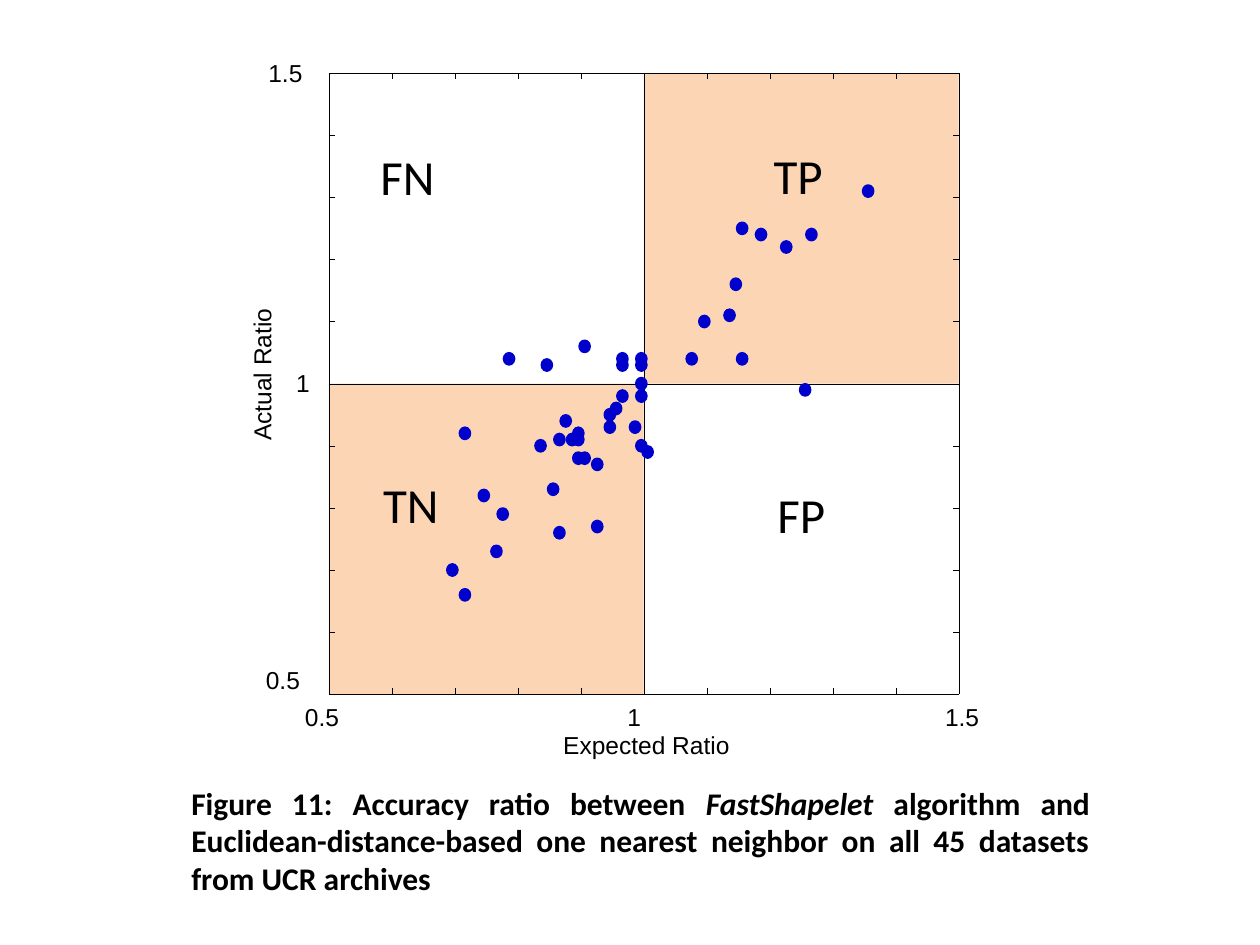
from typing import NamedTuple

from lxml import etree
from pptx import Presentation, util as u
from pptx.dml.color import RGBColor
from pptx.enum import shapes as es, text as et
from pptx.oxml.ns import qn

HUES = {"ink": "000000", "shade": "FCD5B5", "dot": "0000CC"}

# The plot is a grid of ten columns and ten rows; all places are in grid units.
LEFT, TOP = 2.61, 0.58
COL, ROW = 0.5, 0.493
SIDE = 10
MID = SIDE / 2
TICK = 0.1
LOW, HIGH = 0.5, 1.5
SHIFT = -0.04  # dots sit slightly left of their exact value
HAIR, THIN = 0.1, 0.25


class Box(NamedTuple):
    col: float
    row: float
    wide: float
    high: float


class Label(NamedTuple):
    words: str
    box: Box
    turn: int = 0


class Dot(NamedTuple):
    x: float
    y: float


AXES = [
    Label("0.5", Box(-0.38, 10.12, 0.58, 0.49)),
    Label("1", Box(4.74, 10.12, 0.24, 0.49)),
    Label("1.5", Box(9.78, 10.12, 0.58, 0.49)),
    Label("0.5", Box(-1, 9.53, 0.58, 0.49)),
    Label("1", Box(-0.52, 4.75, 0.24, 0.49)),
    Label("1.5", Box(-0.96, -0.24, 0.58, 0.49)),
    Label("Expected Ratio", Box(3.72, 10.57, 2.68, 0.49)),
    Label("Actual Ratio", Box(-2.12, 4.6, 2.12, 0.49), 270),
]
ZONES = [
    Label("FP", Box(7.12, 6.63, 0.78, 0.95)),
    Label("TP", Box(7.06, 1.16, 0.8, 0.95)),
    Label("FN", Box(0.82, 1.18, 0.88, 0.95)),
    Label("TN", Box(0.86, 6.47, 0.92, 0.95)),
]
CAPTION = [
    ("Figure 11: Accuracy ratio between ", False),
    ("FastShapelet", True),
    (" algorithm and Euclidean-distance-based one nearest neighbor "
     "on all 45 datasets from UCR archives ", False),
]
DOTS = [Dot(*pair) for pair in (
    (0.70, 0.70), (0.78, 0.79), (1.08, 1.04), (1.14, 1.11), (1.00, 0.90),
    (0.72, 0.92), (1.27, 1.24), (1.00, 1.03), (0.88, 0.94), (0.90, 0.88),
    (1.16, 1.25), (1.15, 1.16), (0.93, 0.87), (0.85, 1.03), (0.97, 1.03),
    (0.79, 1.04), (0.87, 0.76), (0.95, 0.95), (0.95, 0.93), (0.97, 1.04),
    (0.91, 1.06), (0.86, 0.83), (1.01, 0.89), (0.90, 0.91), (1.19, 1.24),
    (1.26, 0.99), (0.89, 0.91), (1.10, 1.10), (0.99, 0.93), (1.16, 1.04),
    (1.00, 1.04), (1.36, 1.31), (1.00, 0.98), (1.23, 1.22), (1.00, 1.00),
    (0.72, 0.66), (0.91, 0.88), (0.75, 0.82), (0.93, 0.77), (0.77, 0.73),
    (0.96, 0.96), (0.90, 0.92), (0.97, 0.98), (0.87, 0.91), (0.84, 0.90),
)]


def hue(name: str) -> RGBColor:
    return RGBColor.from_string(HUES[name])


def spot(col: float, row: float) -> tuple[int, int]:
    """Turn a grid place into slide lengths."""
    return u.Inches(LEFT + col * COL), u.Inches(TOP + row * ROW)


def frame(box: Box) -> tuple[int, int, int, int]:
    """Turn a grid box into left, top, width and height."""
    return (*spot(box.col, box.row),
            u.Inches(box.wide * COL), u.Inches(box.high * ROW))


def add_form(slide, kind, box: Box, fill: str, edge: float = 0) -> None:
    form = slide.shapes.add_shape(kind, *frame(box))
    form.shadow.inherit = False
    form.fill.solid()
    form.fill.fore_color.rgb = hue(fill)
    if edge:
        form.line.color.rgb = hue(fill)
        form.line.width = u.Pt(edge)
    else:
        form.line.fill.background()


def add_line(slide, start: tuple, end: tuple, width: float = HAIR) -> None:
    line = slide.shapes.add_connector(
        es.MSO_CONNECTOR.STRAIGHT, *spot(*start), *spot(*end))
    line.line.color.rgb = hue("ink")
    line.line.width = u.Pt(width)
    props = line._element.find(qn("p:spPr"))
    etree.SubElement(props, qn("a:effectLst"))


def add_text(slide, runs: list, box: Box, *, font: str, size: int,
             turn: int = 0, bold: bool = False, wrap: bool = False,
             align=None, inset: bool = False) -> None:
    """Add one paragraph made of (words, italic) runs."""
    area = slide.shapes.add_textbox(*frame(box))
    area.rotation = turn
    body = area.text_frame
    body.word_wrap = wrap
    body.auto_size = et.MSO_AUTO_SIZE.SHAPE_TO_FIT_TEXT
    if not inset:
        body.margin_left = body.margin_right = 0
        body.margin_top = body.margin_bottom = 0
    para = body.paragraphs[0]
    para.alignment = align
    for words, slant in runs:
        run = para.add_run()
        run.text = words
        run.font.name = font
        run.font.size = u.Pt(size)
        run.font.bold = bold
        run.font.italic = slant
        run.font.color.rgb = hue("ink")


def add_ticks(slide) -> None:
    for step in range(SIDE + 1):
        for edge, inner in ((SIDE, SIDE - TICK), (0, TICK)):
            add_line(slide, (step, edge), (step, inner))
            add_line(slide, (edge, step), (inner, step))


def add_dots(slide) -> None:
    wide, high = 0.16, 0.18
    for dot in DOTS:
        col = (dot.x - LOW) * SIDE + SHIFT
        row = (HIGH - dot.y) * SIDE
        box = Box(col - wide / 2, row - high / 2, wide, high)
        add_form(slide, es.MSO_SHAPE.OVAL, box, "dot", 1.5)


def main() -> None:
    deck = Presentation()
    deck.slide_width, deck.slide_height = u.Inches(10), u.Inches(7.5)
    slide = deck.slides.add_slide(deck.slide_layouts[6])

    add_text(slide, CAPTION, Box(-2.38, 11.34, 14.66, 2.05), font="Calibri",
             size=18, bold=True, wrap=True, inset=True,
             align=et.PP_ALIGN.JUSTIFY)
    for col, row in ((0, MID), (MID, 0)):
        add_form(slide, es.MSO_SHAPE.RECTANGLE, Box(col, row, MID, MID), "shade")
    add_ticks(slide)
    for label in AXES:
        add_text(slide, [(label.words, False)], label.box, font="Arial",
                 size=14, turn=label.turn)
    add_line(slide, (0, MID), (SIDE, MID))
    add_line(slide, (MID, SIDE), (MID, 0))
    for label in ZONES:
        add_text(slide, [(label.words, False)], label.box, font="Calibri",
                 size=28)
    add_dots(slide)
    for edge in (0, SIDE):
        add_line(slide, (0, edge), (SIDE, edge), THIN)
        add_line(slide, (edge, 0), (edge, SIDE), THIN)

    deck.save("out.pptx")


if __name__ == "__main__":
    main()
